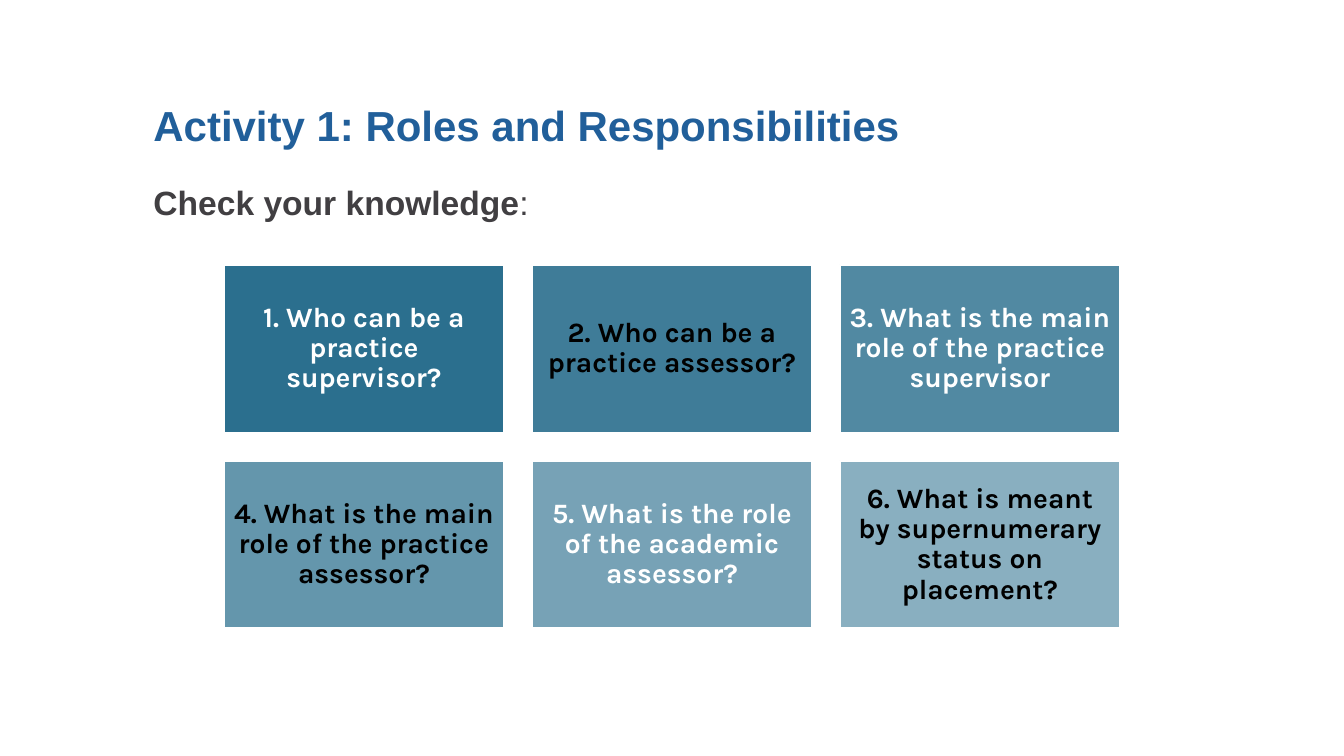
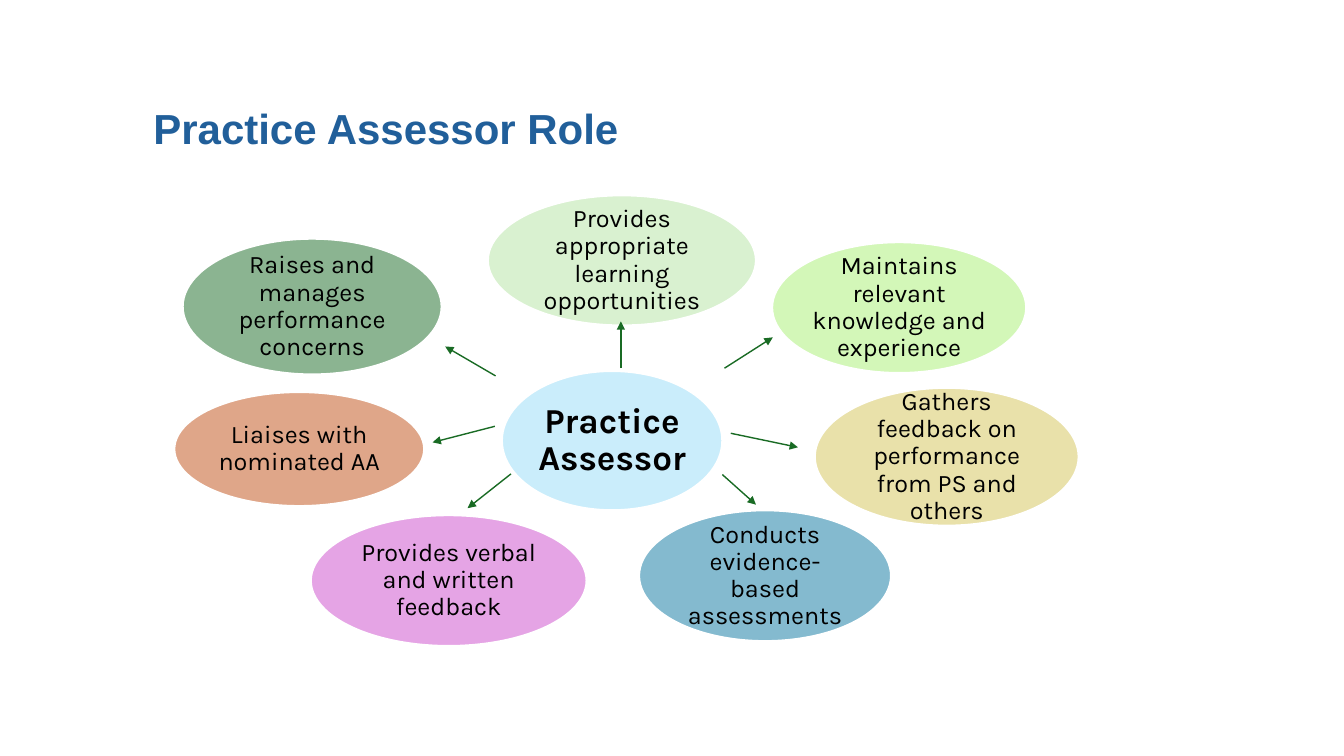
from dataclasses import dataclass

from pptx import Presentation
from pptx.dml.color import RGBColor
from pptx.enum import shapes, text
from pptx.oxml.ns import qn
from pptx.util import Pt
from lxml import etree


@dataclass(frozen=True)
class Theme:
    heading_font: str = "Arial"
    body_font: str = "Karla"
    title: str = "215F9A"
    subtitle: str = "413F42"
    tile: str = "156082"
    hub: str = "96DCF8"
    arrow: str = "196B24"
    light: str = "FFFFFF"
    dark: str = "000000"
    title_size: float = 30
    subtitle_size: float = 24
    tile_size: float = 20
    hub_size: float = 25
    role_size: float = 18


THEME = Theme()

QUESTIONS = [
    "1. Who can be a practice supervisor?",
    "2. Who can be a practice assessor?",
    "3. What is the main role of the practice supervisor",
    "4. What is the main role of the practice assessor?",
    "5. What is the role of the academic assessor?",
    "6. What is meant by supernumerary status on placement?",
]

HUB_BOX = (358.5, 265, 157.5, 99.5)

# Wording, colour, ellipse (left, top, width, height), arrow (from x, y, to x, y)
ROLES = [
    ("Provides appropriate learning opportunities", "B4E5A2",
     (348.5, 139.5, 191.5, 93), (443.5, 263, 443.5, 229.5)),
    ("Provides verbal and written feedback", "CD4BCD",
     (222, 368, 197, 93.5), (365, 338.5, 334, 363)),
    ("Gathers feedback on performance from PS and others", "D4C556",
     (582, 277, 188.5, 98.5), (522, 309.5, 570, 319.5)),
    ("Conducts evidence-based assessments", "0B76A0",
     (456.5, 364.5, 180, 93.5), (516, 339, 540, 360.5)),
    ("Liaises with nominated AA", "C04F15",
     (124.5, 280, 178.5, 81.5), (353.5, 304.5, 309, 316)),
    ("Maintains relevant knowledge and experience", "A8F072",
     (551.5, 173, 181.5, 93.5), (517.5, 263, 552, 241)),
    ("Raises and manages performance concerns", "196B24",
     (130.5, 170.5, 185, 97), (354, 268.5, 318, 247.5)),
]


def points(values):
    return [Pt(value) for value in values]


def style_font(font, name, size, colour, bold=False):
    font.name = name
    font.size = Pt(size)
    font.bold = bold
    font.color.rgb = RGBColor.from_string(colour)


def add_heading(slide, words, box, size, colour):
    """Add a bold heading line and return its paragraph."""
    frame = slide.shapes.add_textbox(*points(box)).text_frame
    frame.word_wrap = True
    frame.vertical_anchor = text.MSO_ANCHOR.MIDDLE
    paragraph = frame.paragraphs[0]
    paragraph.text = words
    style_font(paragraph.runs[0].font, THEME.heading_font, size, colour, True)
    return paragraph


def add_title(slide, words, top):
    add_heading(slide, words, (102.5, top, 714, 42), THEME.title_size, THEME.title)


def add_subtitle(slide, words, ending):
    """Add a bold subtitle with a regular-weight ending."""
    paragraph = add_heading(slide, words, (102.5, 126, 659, 36),
                            THEME.subtitle_size, THEME.subtitle)
    run = paragraph.add_run()
    run.text = ending
    style_font(run.font, THEME.heading_font, THEME.subtitle_size, THEME.subtitle)


def add_label_shape(slide, kind, words, box, fill, opacity, inset, size, colour, bold=False):
    """Add a translucent, white-edged shape with centred text; opacity is in percent."""
    shape = slide.shapes.add_shape(kind, *points(box))
    shape.shadow.inherit = False
    shape.fill.solid()
    shape.fill.fore_color.rgb = RGBColor.from_string(fill)
    colour_element = shape.fill._xPr.find(qn("a:solidFill"))[0]
    etree.SubElement(colour_element, qn("a:alpha"), val=str(opacity * 1000))
    shape.line.color.rgb = RGBColor.from_string(THEME.light)
    shape.line.width = Pt(1.5)

    frame = shape.text_frame
    frame.word_wrap = True
    frame.vertical_anchor = text.MSO_ANCHOR.MIDDLE
    frame.margin_left = frame.margin_right = Pt(inset)
    frame.margin_top = frame.margin_bottom = Pt(inset)
    paragraph = frame.paragraphs[0]
    paragraph.text = words
    paragraph.alignment = text.PP_ALIGN.CENTER
    paragraph.line_spacing = 0.9
    style_font(paragraph.runs[0].font, THEME.body_font, size, colour, bold)


def add_ellipse(slide, words, box, fill, size, bold=False):
    add_label_shape(slide, shapes.MSO_SHAPE.OVAL, words, box, fill, 50, 2.16,
                    size, THEME.dark, bold)


def add_arrow(slide, ends):
    connector = slide.shapes.add_connector(shapes.MSO_CONNECTOR.STRAIGHT, *points(ends))
    connector.line.color.rgb = RGBColor.from_string(THEME.arrow)
    connector.line.width = Pt(1)
    etree.SubElement(connector.line._get_or_add_ln(), qn("a:tailEnd"), type="triangle")
    etree.SubElement(connector._element.spPr, qn("a:effectLst"))


def add_question_grid(slide):
    left, top, width, height, gap, columns = 160, 189, 200, 120, 20, 3
    for index, question in enumerate(QUESTIONS):
        row, column = divmod(index, columns)
        box = (left + column * (width + gap), top + row * (height + gap), width, height)
        colour = THEME.dark if index % 2 else THEME.light
        add_label_shape(slide, shapes.MSO_SHAPE.RECTANGLE, question, box, THEME.tile,
                        90 - 8 * index, 5.76, THEME.tile_size, colour, True)


def add_role_map(slide):
    add_ellipse(slide, "Practice Assessor", HUB_BOX, THEME.hub, THEME.hub_size, True)
    for words, fill, box, _ in ROLES:
        add_ellipse(slide, words, box, fill, THEME.role_size)
    for *_, arrow in ROLES:
        add_arrow(slide, arrow)


def main():
    presentation = Presentation()
    presentation.slide_width, presentation.slide_height = Pt(960), Pt(540)
    blank = presentation.slide_layouts[6]

    activity = presentation.slides.add_slide(blank)
    add_title(activity, "Activity 1: Roles and Responsibilities", 68)
    add_subtitle(activity, "Check your knowledge", ":")
    add_question_grid(activity)

    assessor = presentation.slides.add_slide(blank)
    add_role_map(assessor)
    add_title(assessor, "Practice Assessor Role", 70.5)

    presentation.save("out.pptx")


if __name__ == "__main__":
    main()
